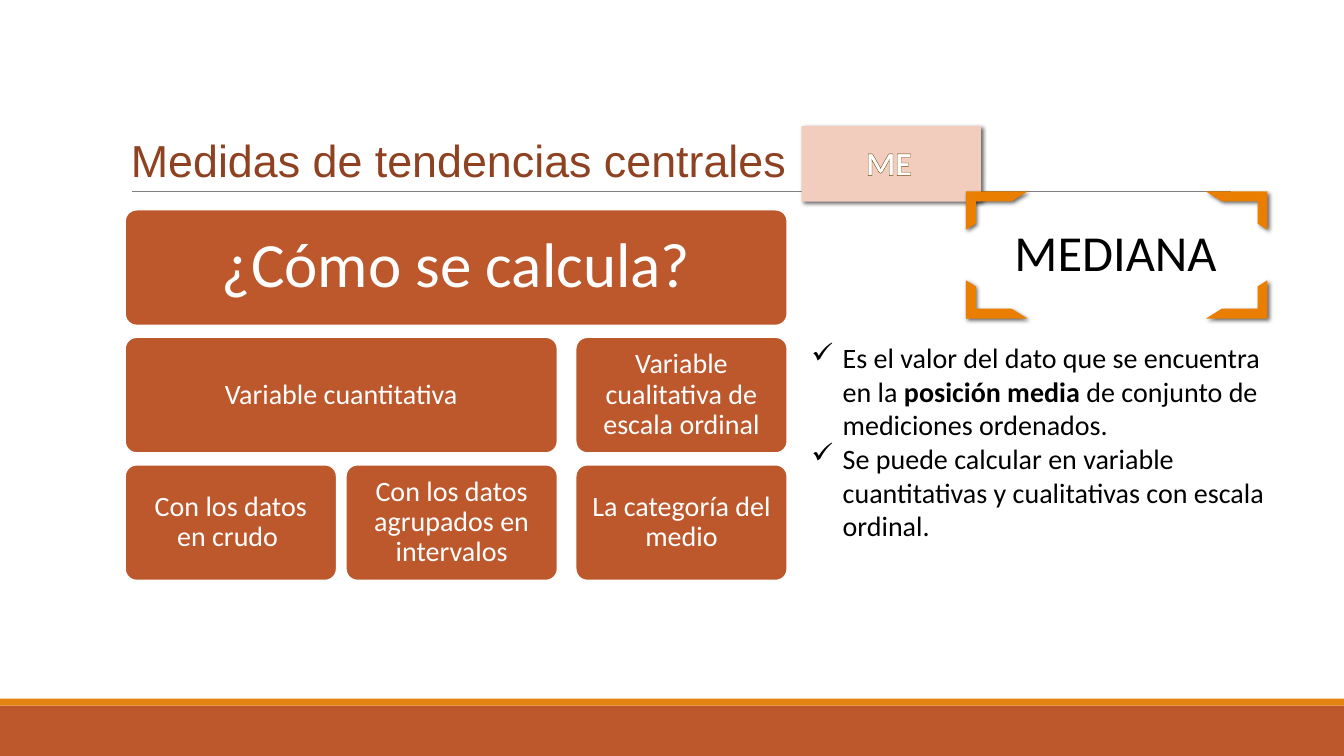
from lxml.etree import SubElement
from pptx import Presentation
from pptx.dml.color import RGBColor
from pptx.enum.shapes import MSO_CONNECTOR, MSO_SHAPE
from pptx.enum.text import MSO_ANCHOR, PP_ALIGN
from pptx.oxml.ns import qn
from pptx.util import Inches, Pt

SLIDE_WIDTH, SLIDE_HEIGHT = Inches(13.33), Inches(7.5)
RUST = RGBColor(0xBD, 0x58, 0x2C)
AMBER = RGBColor(0xE4, 0x83, 0x12)
ORANGE = RGBColor(0xEA, 0x7E, 0x00)
PEACH = RGBColor(0xF2, 0xCD, 0xBD)
BROWN = RGBColor(0x8E, 0x42, 0x21)
OUTLINE = RGBColor(0x72, 0x42, 0x09)
GRAY = RGBColor(0x80, 0x80, 0x80)
BLACK = RGBColor(0, 0, 0)
WHITE = RGBColor(255, 255, 255)

# Tile grid, in percent of the slide
COLUMN_LEFTS = (9.3, 25.73, 42.83)
COLUMN_WIDTH = 15.75
FIRST_ROW, ROW_PITCH, ROW_HEIGHT = 27.73, 16.87, 15.33

# Text, row, first column, last column, size, inset
TILES = (
    ("¿Cómo se calcula?", 0, 0, 2, 45, 0.22),
    ("Variable cuantitativa", 1, 0, 1, 20, 0.12),
    ("Con los datos en crudo ", 2, 0, 0, 20, 0.12),
    ("Con los datos agrupados en intervalos", 2, 1, 1, 20, 0.12),
    ("Variable cualitativa de escala ordinal", 1, 2, 2, 20, 0.12),
    ("La categoría del medio", 2, 2, 2, 20, 0.12),
)
DEFINITION = (
    (("Es el valor del dato que se encuentra en la ", False),
     ("posición media ", True),
     ("de conjunto de mediciones ordenados.", False)),
    (("Se puede calcular en variable cuantitativas y cualitativas "
      "con escala ordinal.", False),),
)


def across(share):
    return round(SLIDE_WIDTH * share / 100)


def down(share):
    return round(SLIDE_HEIGHT * share / 100)


def area(left, top, width, height):
    return across(left), down(top), across(width), down(height)


def add_span(para, text, size=20, color=BLACK, font="Calibri", bold=False):
    span = para.add_run()
    span.text = text
    span.font.size = Pt(size)
    span.font.name = font
    span.font.bold = bold
    span.font.color.rgb = color
    return span


def write(box, text, anchor=MSO_ANCHOR.MIDDLE, align=PP_ALIGN.CENTER,
          spacing=0.9, inset=None, **style):
    frame = box.text_frame
    frame.word_wrap = True
    frame.vertical_anchor = anchor
    if inset is not None:
        frame.margin_left = frame.margin_right = Inches(inset)
        frame.margin_top = frame.margin_bottom = Inches(inset)
    para = frame.paragraphs[0]
    para.alignment = align
    para.line_spacing = spacing
    return add_span(para, text, **style)


def add_block(page, kind, place, fill):
    block = page.shapes.add_shape(kind, *place)
    block.shadow.inherit = False
    block.fill.solid()
    block.fill.fore_color.rgb = fill
    block.line.fill.background()
    return block


def cast_shadow(block):
    effects = block._element.spPr.find(qn("a:effectLst"))
    shadow = SubElement(effects, qn("a:outerShdw"), blurRad=str(Pt(3)),
                        dist=str(Pt(2)), dir="2700000", rotWithShape="0")
    color = SubElement(shadow, qn("a:srgbClr"), val=str(BLACK))
    SubElement(color, qn("a:alpha"), val="60000")


def add_rule(page, left, right, top):
    rule = page.shapes.add_connector(MSO_CONNECTOR.STRAIGHT, across(left),
                                     down(top), across(right), down(top))
    rule.line.color.rgb = GRAY
    rule.line.width = Pt(0.5)
    SubElement(rule._element.spPr, qn("a:effectLst"))


def add_corner(page, left, top, rotation):
    x, y, width, height = area(left, top, 4.58, 5.07)
    if rotation % 180:  # a quarter turn swaps the sides around the centre
        shift = (width - height) // 2
        x, y, width, height = x + shift, y - shift, height, width
    corner = add_block(page, MSO_SHAPE.HALF_FRAME, (x, y, width, height), ORANGE)
    corner.adjustments[0] = corner.adjustments[1] = 0.258
    corner.rotation = rotation
    cast_shadow(corner)


def add_tile(page, text, row, first, last, size, inset):
    left = COLUMN_LEFTS[first]
    width = COLUMN_LEFTS[last] + COLUMN_WIDTH - left
    place = area(left, FIRST_ROW + row * ROW_PITCH, width, ROW_HEIGHT)
    tile = add_block(page, MSO_SHAPE.ROUNDED_RECTANGLE, place, RUST)
    tile.adjustments[0] = 0.1
    tile.line.color.rgb = WHITE
    tile.line.width = Pt(1.25)
    write(tile, text, inset=inset, size=size, color=WHITE)


def add_checklist(page, place, items):
    frame = page.shapes.add_textbox(*place).text_frame
    frame.word_wrap = True
    for number, spans in enumerate(items):
        para = frame.add_paragraph() if number else frame.paragraphs[0]
        properties = para._p.get_or_add_pPr()
        properties.set("marL", str(Inches(0.31)))
        properties.set("indent", str(-Inches(0.31)))
        SubElement(properties, qn("a:buChar"), char="✓")
        for text, bold in spans:
            add_span(para, text, bold=bold)


def outline_text(span):
    properties = span._r.get_or_add_rPr()
    line = SubElement(properties, qn("a:ln"), w=str(Pt(0.52)))
    fill = SubElement(line, qn("a:solidFill"))
    SubElement(fill, qn("a:srgbClr"), val=str(OUTLINE))
    properties.insert(0, line)


def main():
    deck = Presentation()
    deck.slide_width, deck.slide_height = SLIDE_WIDTH, SLIDE_HEIGHT
    page = deck.slides.add_slide(deck.slide_layouts[6])

    # Footer bands and heading
    add_block(page, MSO_SHAPE.RECTANGLE, area(0, 93.33, 100, 6.67), RUST)
    add_block(page, MSO_SHAPE.RECTANGLE, area(0, 92.4, 100, 0.93), AMBER)
    add_rule(page, 9.83, 91.6, 25.33)
    title = page.shapes.add_textbox(*area(9, 4.13, 82.5, 21.2))
    write(title, "Medidas de tendencias centrales", anchor=MSO_ANCHOR.BOTTOM,
          align=PP_ALIGN.LEFT, spacing=0.85, size=32, color=BROWN, font="Arial")

    # Framed term
    plaque = add_block(page, MSO_SHAPE.RECTANGLE,
                       area(59.64, 16.67, 13.35, 10), PEACH)
    cast_shadow(plaque)
    term = page.shapes.add_textbox(*area(73.52, 27.2, 18.98, 13.07))
    write(term, "MEDIANA", inset=0.23, size=36)
    left, right, top, bottom = 71.87, 89.72, 25.33, 37.07
    for x, y, rotation in ((left, top, 0), (right, top, 90),
                           (left, bottom, 270), (right, bottom, 180)):
        add_corner(page, x, y, rotation)
    symbol = page.shapes.add_textbox(*area(63.69, 18.13, 5.78, 6.67))
    outline_text(write(symbol, "ME", anchor=MSO_ANCHOR.TOP, align=PP_ALIGN.LEFT,
                       spacing=1.0, size=24, color=WHITE, bold=True))

    # Definition and calculation tiles
    add_checklist(page, area(59.64, 44.4, 37.28, 32.27), DEFINITION)
    for tile in TILES:
        add_tile(page, *tile)

    deck.save("out.pptx")


if __name__ == "__main__":
    main()
